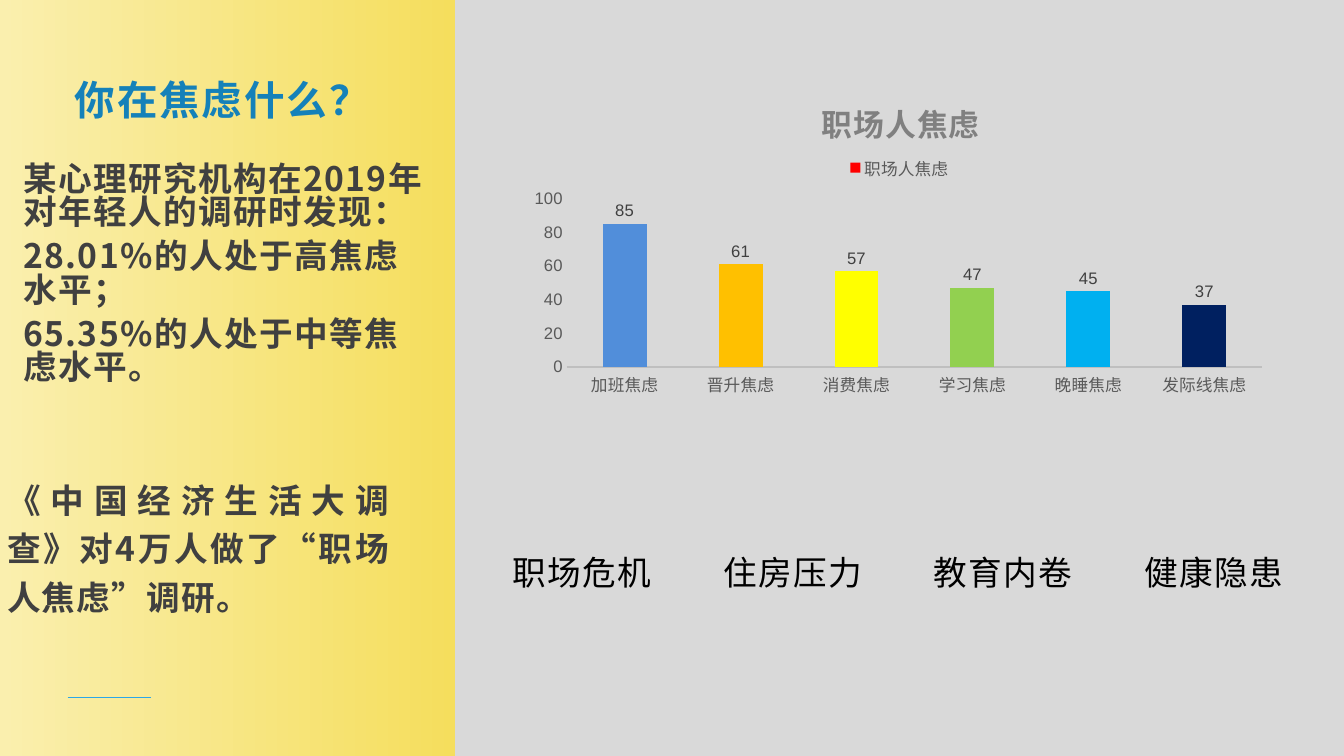
"""Build a slide on what worries young workers, with a chart of anxieties."""
from lxml import etree
from pptx import Presentation
from pptx import util as u
from pptx.chart.data import CategoryChartData
from pptx.dml.color import RGBColor
from pptx.enum import chart as charts, shapes, text
from pptx.oxml import ns

FONT = "Noto Sans CJK SC"
CHART_FONT = "Arial"
GREY = "595959"
ANXIETIES = [
    ("加班焦虑", 85, "518EDA"),
    ("晋升焦虑", 61, "FFC000"),
    ("消费焦虑", 57, "FFFF00"),
    ("学习焦虑", 47, "92D050"),
    ("晚睡焦虑", 45, "00B0F0"),
    ("发际线焦虑", 37, "002060"),
]
FINDINGS = [
    "某心理研究机构在2019年对年轻人的调研时发现：",
    "28.01%的人处于高焦虑水平；",
    "65.35%的人处于中等焦虑水平。",
]
SURVEY = "《中国经济生活大调查》对4万人做了“职场人焦虑”调研。"
WORRIES = ["职场危机", "住房压力", "教育内卷", "健康隐患"]


def color(value):
    return RGBColor.from_string(value)


def set_font(font, size, fill, name=CHART_FONT, bold=False):
    font.size, font.bold, font.name = u.Pt(size), bold, name
    font.color.rgb = color(fill)


def write(paragraph, content, size=24, fill="404040", name=FONT, bold=True,
          spacing=1.0, align=None, line=None, after=0):
    """Add formatted text to a paragraph."""
    paragraph.alignment = align
    paragraph.line_spacing = line
    paragraph.space_after = u.Pt(after)
    run = paragraph.add_run()
    run.text = content
    set_font(run.font, size, fill, name, bold)
    properties = run._r.get_or_add_rPr()
    properties.set("spc", str(int(spacing * 100)))
    etree.SubElement(properties, ns.qn("a:ea"), typeface=FONT)


def place(element, index, **fractions):
    """Give a chart part a manual layout as fractions of the chart."""
    for old in element.findall(ns.qn("c:layout")):
        element.remove(old)
    layout = etree.Element(ns.qn("c:layout"))
    manual = etree.SubElement(layout, ns.qn("c:manualLayout"))
    if "h" in fractions and index == 0:
        etree.SubElement(manual, ns.qn("c:layoutTarget"), val="inner")
    for side in ("x", "y"):
        etree.SubElement(manual, ns.qn(f"c:{side}Mode"), val="edge")
    for side, value in fractions.items():
        etree.SubElement(manual, ns.qn(f"c:{side}"), val=str(value))
    element.insert(index, layout)


class Deck:
    """Hold the presentation, its style and the current slide."""

    def __init__(self, background):
        self.presentation = Presentation()
        self.presentation.slide_width = u.Inches(13.33)
        self.presentation.slide_height = u.Inches(7.5)
        self.slide = self.presentation.slides.add_slide(
            self.presentation.slide_layouts[6])
        self.slide.background.fill.solid()
        self.slide.background.fill.fore_color.rgb = color(background)

    def panel(self, box, start, end):
        shape = self.slide.shapes.add_shape(
            shapes.MSO_SHAPE.RECTANGLE, *map(u.Inches, box))
        shape.shadow.inherit = False
        shape.line.fill.background()
        shape.fill.gradient()
        shape.fill.gradient_angle = 0
        for stop, value in zip(shape.fill.gradient_stops, (start, end)):
            stop.color.rgb = color(value)
            stop.position = 0 if value == start else 1

    def rule(self, ends, fill, width):
        connector = self.slide.shapes.add_connector(
            shapes.MSO_CONNECTOR.STRAIGHT, *map(u.Inches, ends))
        connector.line.color.rgb = color(fill)
        connector.line.width = u.Pt(width)
        etree.SubElement(connector._element.spPr, ns.qn("a:effectLst"))

    def text(self, box, paragraphs, inset=(0.07, 0.03), **style):
        frame = self.slide.shapes.add_textbox(*map(u.Inches, box)).text_frame
        frame.word_wrap = True
        frame.margin_left = frame.margin_right = u.Inches(inset[0])
        frame.margin_top = frame.margin_bottom = u.Inches(inset[1])
        for number, content in enumerate(paragraphs):
            paragraph = frame.add_paragraph() if number else frame.paragraphs[0]
            write(paragraph, content, **style)

    def columns(self, box, title, rows):
        data = CategoryChartData()
        data.categories = [name for name, _, _ in rows]
        data.add_series(title, [value for _, value, _ in rows])
        chart = self.slide.shapes.add_chart(
            charts.XL_CHART_TYPE.COLUMN_CLUSTERED, *map(u.Inches, box), data).chart
        set_font(chart.font, 10, "000000")
        write(chart.chart_title.text_frame.paragraphs[0], title,
              size=22, fill="808080", name=CHART_FONT)
        chart.chart_title.include_text_frame = True
        place(chart.chart_title._element, 1, x=0.39, y=0.07)
        chart.has_legend = True
        chart.legend.position = charts.XL_LEGEND_POSITION.TOP
        chart.legend.include_in_layout = False
        set_font(chart.legend.font, 11.9, GREY)
        place(chart.legend._element, 1, x=0.43, y=0.26, w=0.14, h=0.07)
        place(chart._chartSpace.chart.plotArea, 0, x=0.06, y=0.39, w=0.92, h=0.5)
        self.axes(chart)
        self.bars(chart.plots[0], [fill for _, _, fill in rows])

    def axes(self, chart):
        for axis in (chart.category_axis, chart.value_axis):
            axis.has_major_gridlines = False
            axis.major_tick_mark = axis.minor_tick_mark = charts.XL_TICK_MARK.NONE
            set_font(axis.tick_labels.font, 11.9, GREY)
        chart.category_axis.format.line.color.rgb = color("BFBFBF")
        chart.category_axis.format.line.width = u.Pt(1.5)
        chart.value_axis.format.line.fill.background()
        chart.value_axis.minimum_scale = 0
        chart.value_axis.maximum_scale = 100
        chart.value_axis.major_unit = 20

    def bars(self, plot, fills):
        plot.gap_width, plot.overlap = 164, -22
        plot.vary_by_categories = False
        series = plot.series[0]
        series.format.fill.solid()
        series.format.fill.fore_color.rgb = color("FF0000")
        for number, value in enumerate(fills):
            fill = series.points[number].format.fill
            fill.solid()
            fill.fore_color.rgb = color(value)
        labels = series.data_labels
        labels.show_value = True
        labels.position = charts.XL_LABEL_POSITION.OUTSIDE_END
        set_font(labels.font, 11.9, "404040")


def main():
    deck = Deck("D9D9D9")
    deck.panel((0, 0, 4.51, 7.5), "FAEFAE", "F5DE5D")
    deck.rule((0.67, 6.92, 1.5, 6.92), "2CA7E7", 1)
    deck.text((0.67, 0.67, 3.17, 1.98), ["你在焦虑什么？"],
              size=29, fill="1581B9", spacing=1.3, line=1.1)
    deck.text((0, 4.65, 3.94, 1.29), [SURVEY],
              align=text.PP_ALIGN.JUSTIFY, line=1.2, after=8)
    deck.columns((5.17, 0.67, 7.5, 3.34), "职场人焦虑", ANXIETIES)
    deck.text((0.16, 1.61, 4.19, 2.5), FINDINGS, line=0.82, after=8)
    for number, worry in enumerate(WORRIES):
        deck.text((4.87 + 2.09 * number, 5.43, 1.8, 0.5), [worry],
                  inset=(0.1, 0.05), fill="000000", bold=False,
                  align=text.PP_ALIGN.CENTER)
    deck.presentation.save("out.pptx")


if __name__ == "__main__":
    main()
